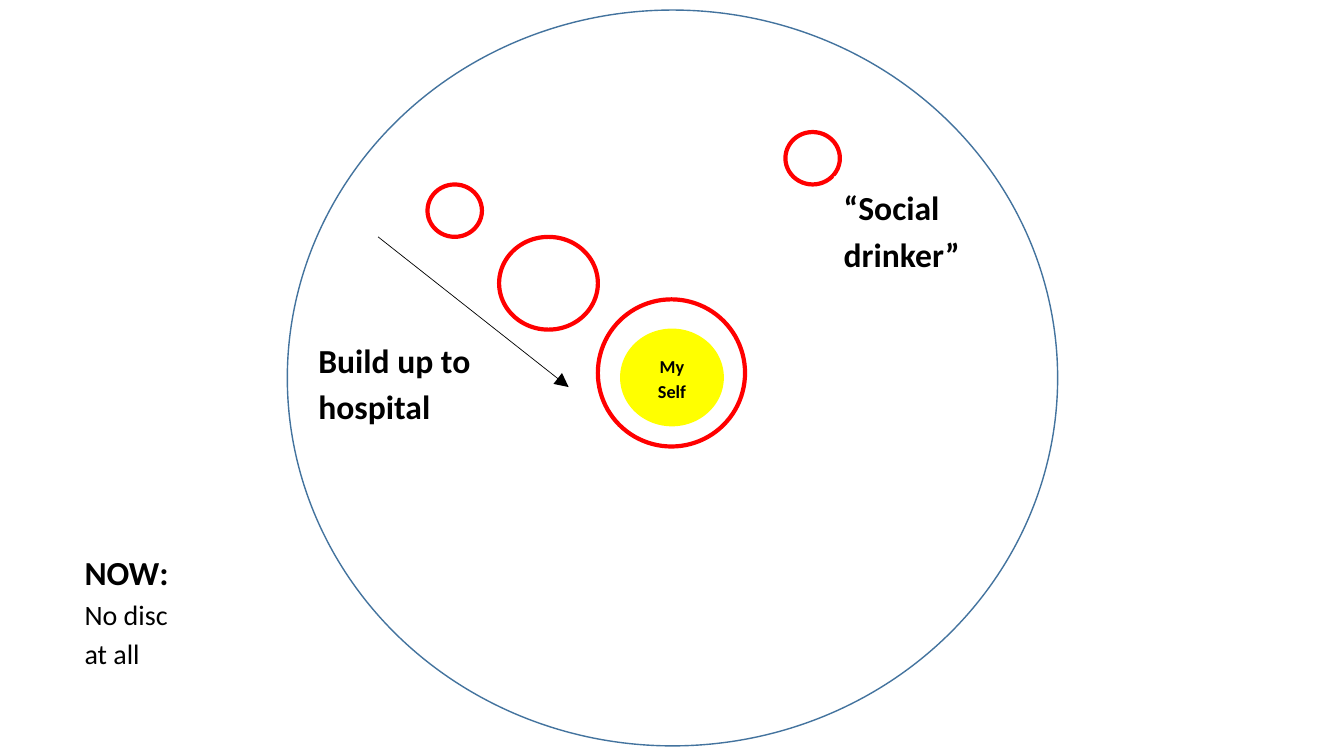
"""Build a slide of discs moving in on the self within a wide circle."""
from pptx import Presentation
from pptx.dml.color import RGBColor
from pptx.enum.shapes import MSO_CONNECTOR, MSO_SHAPE
from pptx.enum.text import MSO_ANCHOR, PP_ALIGN
from pptx.util import Inches, Pt
from lxml.etree import SubElement
from pptx.oxml.ns import qn

BLUE = RGBColor(0x43, 0x73, 0x9E)
RED = RGBColor(0xFF, 0x00, 0x00)
YELLOW = RGBColor(0xFF, 0xFF, 0x00)
BLACK = RGBColor(0x00, 0x00, 0x00)
WHITE = RGBColor(0xFF, 0xFF, 0xFF)

deck = Presentation()
deck.slide_width, deck.slide_height = Inches(13.33), Inches(7.5)
slide = deck.slides.add_slide(deck.slide_layouts[6])


def add_disc(box, line=None, width=0, fill=None):
    disc = slide.shapes.add_shape(MSO_SHAPE.OVAL, *map(Inches, box))
    disc.shadow.inherit = False
    if fill is None:
        disc.fill.background()
    else:
        disc.fill.solid()
        disc.fill.fore_color.rgb = fill
    if line is None:
        disc.line.fill.background()
    else:
        disc.line.color.rgb = line
        disc.line.width = Pt(width)
    return disc


def set_text(frame, runs):
    frame.word_wrap = True
    para = frame.paragraphs[0]
    para.line_spacing = 1.15
    para.space_after = Pt(10)
    para.font.name = "Calibri"
    para.font.color.rgb = BLACK
    for text, size, bold in runs:
        run = para.add_run()
        run.text = text
        run.font.size = Pt(size)
        run.font.bold = bold
    return para


add_disc((2.85, 0.1, 7.64, 7.3), BLUE, 1)
for box in [
    (4.24, 1.83, 0.54, 0.52),
    (4.95, 2.35, 0.98, 0.92),
    (5.93, 2.97, 1.46, 1.46),
    (7.79, 1.31, 0.54, 0.52),
]:
    add_disc(box, RED, 3)

self_disc = add_disc((6.15, 3.26, 1.03, 0.97), fill=YELLOW)
self_disc.text_frame.vertical_anchor = MSO_ANCHOR.MIDDLE
set_text(self_disc.text_frame, [("My Self", 13, True)]).alignment = PP_ALIGN.CENTER

arrow = slide.shapes.add_connector(
    MSO_CONNECTOR.STRAIGHT, Inches(3.75), Inches(2.35), Inches(5.64), Inches(3.84)
)
arrow.line.color.rgb = BLACK
arrow.line.width = Pt(0.5)
SubElement(arrow.line._get_or_add_ln(), qn("a:tailEnd"), type="triangle", w="lg", len="lg")
SubElement(arrow._element.spPr, qn("a:effectLst"))

labels = [
    ((0.74, 5.37, 1.1, 1.35), [("NOW: ", 24, True), ("No disc at all", 20, False)]),
    ((3.06, 3.26, 1.73, 0.99), [("Build up to hospital", 24, True)]),
    ((8.27, 1.75, 1.53, 1.2), [("“Social drinker”", 24, True)]),
]
for box, runs in labels:
    label = slide.shapes.add_textbox(*map(Inches, box))
    label.fill.solid()
    label.fill.fore_color.rgb = WHITE
    set_text(label.text_frame, runs)

deck.save("out.pptx")
